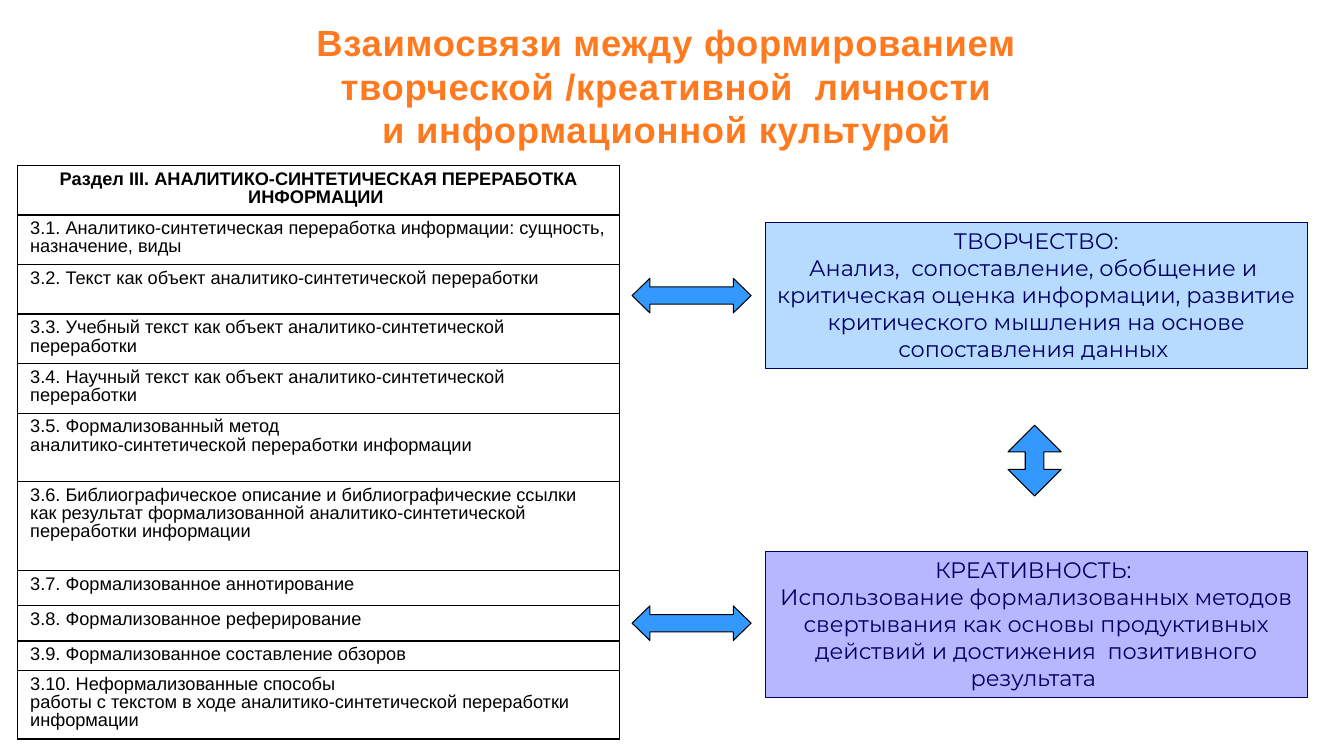
from lxml import etree
from pptx import Presentation
from pptx import util as u
from pptx.dml import color
from pptx.enum import shapes, text
from pptx.oxml import ns

Pt = u.Pt
COLOURS = {
    "title": "FF7A1F",
    "black": "000000",
    "white": "FFFFFF",
    "navy": "000066",
    "creation": "99CCFF",
    "creativity": "9999FF",
    "arrow": "3399FF",
}
TITLE = [
    "Взаимосвязи между формированием ",
    "творческой /креативной  личности ",
    "и информационной культурой ",
]
SECTIONS = [
    (35.4, ["Раздел III. АНАЛИТИКО-СИНТЕТИЧЕСКАЯ ПЕРЕРАБОТКА ИНФОРМАЦИИ "]),
    (35.4, ["3.1. Аналитико-синтетическая переработка информации: сущность, назначение, виды"]),
    (35.4, ["3.2. Текст как объект аналитико-синтетической переработки"]),
    (35.4, ["3.3. Учебный текст как объект аналитико-синтетической переработки"]),
    (35.4, ["3.4. Научный текст как объект аналитико-синтетической переработки"]),
    (49, ["3.5. Формализованный метод",
          "аналитико-синтетической переработки информации"]),
    (63.4, ["3.6. Библиографическое описание и библиографические ссылки как результат "
            "формализованной аналитико-синтетической переработки информации"]),
    (25.2, ["3.7. Формализованное аннотирование"]),
    (25.2, ["3.8. Формализованное реферирование"]),
    (21.1, ["3.9. Формализованное составление обзоров"]),
    (49, ["3.10. Неформализованные способы",
          "работы с текстом в ходе аналитико-синтетической переработки информации"]),
]
CREATION = [
    "ТВОРЧЕСТВО:",
    "Анализ,  сопоставление, обобщение и  критическая оценка информации, "
    "развитие критического мышления на основе сопоставления данных ",
]
CREATIVITY = [
    "КРЕАТИВНОСТЬ: ",
    "Использование формализованных методов свертывания как основы продуктивных "
    "действий и достижения  позитивного результата ",
]


def rgb(name):
    return color.RGBColor.from_string(COLOURS[name])


def add_run(paragraph, words, font, size, colour, bold=False):
    run = paragraph.add_run()
    run.text = words
    run.font.name = font
    run.font.size = Pt(size)
    run.font.bold = bold
    run.font.color.rgb = rgb(colour)
    return run


def write(frame, lines, font, size, colour, align, bold=False, spacing=1.0):
    frame.word_wrap = True
    for index, line in enumerate(lines):
        paragraph = frame.add_paragraph() if index else frame.paragraphs[0]
        paragraph.alignment = align
        paragraph.line_spacing = spacing
        add_run(paragraph, line, font, size, colour, bold)


def fill_solid(fill, colour, opacity=100):
    fill.solid()
    fill.fore_color.rgb = rgb(colour)
    if opacity < 100:
        tint = fill._xPr.find(".//" + ns.qn("a:srgbClr"))
        etree.SubElement(tint, ns.qn("a:alpha"), val=str(opacity * 1000))


def add_shape(slide, kind, box, colour, line, opacity=100):
    shape = slide.shapes.add_shape(kind, *map(Pt, box))
    shape.shadow.inherit = False
    fill_solid(shape.fill, colour, opacity)
    shape.line.color.rgb = rgb(line)
    shape.line.width = Pt(0.75)
    return shape


def add_box(slide, top, colour, lines):
    shape = add_shape(slide, shapes.MSO_SHAPE.RECTANGLE, (546.5, top, 387.4, 104.4),
                      colour, "navy", 70)
    shape.text_frame.vertical_anchor = text.MSO_ANCHOR.TOP
    write(shape.text_frame, lines, "Montserrat", 16, "navy", text.PP_ALIGN.CENTER)


def add_arrow(slide, kind, box, head):
    arrow = add_shape(slide, kind, box, "arrow", "black")
    arrow.adjustments[0] = 0.5
    arrow.adjustments[1] = head


def add_borders(cell):
    properties = cell._tc.get_or_add_tcPr()
    for side in ("lnL", "lnR", "lnT", "lnB"):
        line = etree.SubElement(properties, ns.qn("a:" + side), w=str(Pt(1)))
        fill = etree.SubElement(line, ns.qn("a:solidFill"))
        etree.SubElement(fill, ns.qn("a:srgbClr"), val=COLOURS["black"])


def add_sections(slide):
    height = sum(row_height for row_height, _ in SECTIONS)
    table = slide.shapes.add_table(len(SECTIONS), 1, Pt(12.4), Pt(118.2),
                                   Pt(430), Pt(height)).table
    table.first_row = False
    table.horz_banding = False
    for index, (row_height, lines) in enumerate(SECTIONS):
        table.rows[index].height = Pt(row_height)
        cell = table.cell(index, 0)
        cell.margin_left = cell.margin_right = Pt(9.2)
        cell.margin_top = cell.margin_bottom = Pt(3.6)
        header = index == 0
        align = text.PP_ALIGN.CENTER if header else text.PP_ALIGN.LEFT
        write(cell.text_frame, lines, "Arial", 13, "black", align, header, 0.9)
        add_borders(cell)
        fill_solid(cell.fill, "white", 50)


def add_title(slide):
    frame = slide.shapes.add_textbox(Pt(0), Pt(10.8), Pt(960), Pt(101.5)).text_frame
    frame.word_wrap = True
    paragraph = frame.paragraphs[0]
    paragraph.alignment = text.PP_ALIGN.CENTER
    for index, line in enumerate(TITLE):
        if index:
            paragraph.add_line_break()
        run = add_run(paragraph, line, "Arial", 26, "title", True)
        run._r.get_or_add_rPr().set("spc", "50")


def main():
    presentation = Presentation()
    presentation.slide_width = Pt(960)
    presentation.slide_height = Pt(540)
    slide = presentation.slides.add_slide(presentation.slide_layouts[6])
    add_sections(slide)
    add_box(slide, 159, "creation", CREATION)
    add_box(slide, 394, "creativity", CREATIVITY)
    for top in (198.8, 432.8):
        add_arrow(slide, shapes.MSO_SHAPE.LEFT_RIGHT_ARROW, (451.5, top, 85, 24.7), 0.515)
    add_arrow(slide, shapes.MSO_SHAPE.UP_DOWN_ARROW, (720, 303.8, 38, 50.5), 0.35)
    add_title(slide)
    presentation.save("out.pptx")


if __name__ == "__main__":
    main()
